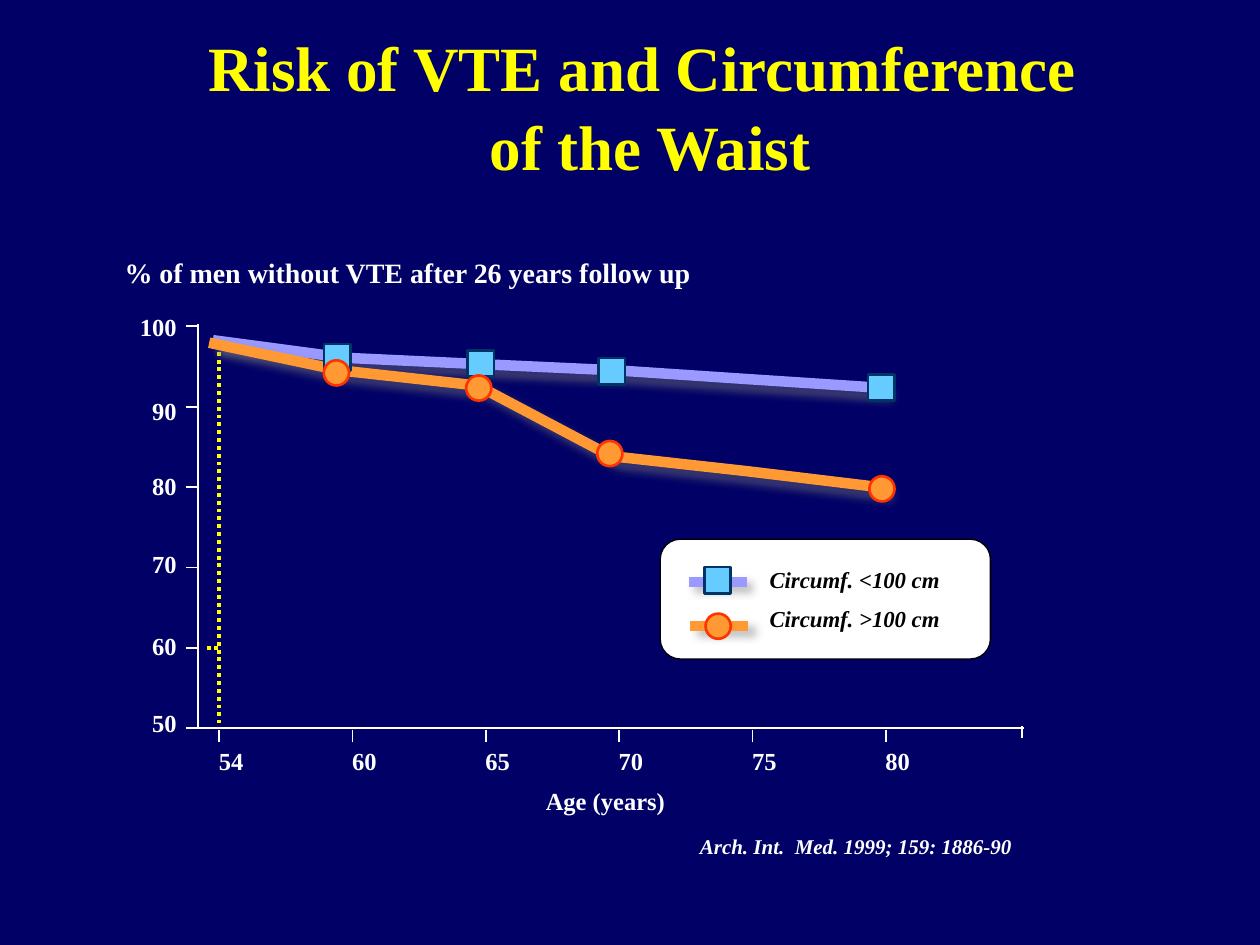
from lxml.etree import SubElement as Sub
from pptx import Presentation
from pptx.dml.color import RGBColor
from pptx.enum.dml import MSO_LINE_DASH_STYLE as Dash
from pptx.enum.shapes import MSO_CONNECTOR as Conn, MSO_SHAPE as Kind
from pptx.enum.text import MSO_ANCHOR as Anchor, PP_ALIGN as Align
from pptx.oxml.ns import qn
from pptx.util import Inches, Pt

FONT = "Times New Roman"
WHITE, YELLOW = "FFFFFF", "FFFF00"
SLIM, WIDE = "9999FF", "FF9933"
MARKS = {
    SLIM: (Kind.RECTANGLE, 0.21, "66CCFF", "003366"),
    WIDE: (Kind.OVAL, 0.2, "FF9933", "FF3300"),
}


def rgb(code):
    return RGBColor.from_string(code)


def text(slide, box, words, size, color=WHITE, align=Align.LEFT,
         italic=False, wrap=True):
    shape = slide.shapes.add_textbox(*map(Inches, box))
    frame = shape.text_frame
    frame.word_wrap = wrap
    para = frame.paragraphs[0]
    para.alignment = align
    for i, part in enumerate(words.split("\n")):
        if i:
            para.add_line_break()
        run = para.add_run()
        run.text = part
        font = run.font
        font.name, font.size, font.bold = FONT, Pt(size), True
        font.italic = italic
        font.color.rgb = rgb(color)
    return frame


def stroke(shape, color, width, dash=None):
    shape.line.color.rgb = rgb(color)
    shape.line.width = Pt(width)
    if dash:
        shape.line.dash_style = dash


def shade(shape, dist, angle):
    """Give the shape a soft grey shadow."""
    props = shape._element.spPr
    for old in props.findall(qn("a:effectLst")):
        props.remove(old)
    shadow = Sub(Sub(props, qn("a:effectLst")), qn("a:outerShdw"),
                 blurRad=str(Pt(5)), dist=str(Pt(dist)),
                 dir=str(angle * 60000), algn="ctr", rotWithShape="0")
    color = Sub(shadow, qn("a:srgbClr"), val="808080")
    Sub(color, qn("a:alpha"), val="50000")


def line(slide, x1, y1, x2, y2, color=WHITE, width=1, dash=None):
    shape = slide.shapes.add_connector(
        Conn.STRAIGHT, *map(Inches, (x1, y1, x2, y2)))
    stroke(shape, color, width, dash)
    Sub(shape._element.spPr, qn("a:effectLst"))
    return shape


def path(slide, points, color, width):
    spots = [(Inches(x), Inches(y)) for x, y in points]
    maker = slide.shapes.build_freeform(*spots[0])
    maker.add_line_segments(spots[1:], close=False)
    shape = maker.convert_to_shape()
    shape.fill.background()
    shape.shadow.inherit = False
    stroke(shape, color, width)
    return shape


def solid(slide, kind, box, fill, edge, width):
    shape = slide.shapes.add_shape(kind, *map(Inches, box))
    shape.shadow.inherit = False
    shape.fill.solid()
    shape.fill.fore_color.rgb = rgb(fill)
    stroke(shape, edge, width)
    return shape


def mark(slide, x, y, name):
    """Draw the marker of a series with its corner at x, y."""
    kind, size, fill, edge = MARKS[name]
    solid(slide, kind, (x, y, size, size), fill, edge, 1.5)


def title(slide, box):
    frame = text(slide, box, "Risk of VTE and Circumference \nof the Waist",
                 36, YELLOW, Align.CENTER)
    frame.vertical_anchor = Anchor.MIDDLE
    frame.paragraphs[0].line_spacing = 1.05


def axes(slide, box):
    x, y, w, h = box
    base = y + h
    first, step = x + 0.17, 1.058
    line(slide, first, y + 0.16, first, base - 0.04, YELLOW, 2.25,
         Dash.ROUND_DOT)
    line(slide, x + 0.07, base - 0.64, first, base - 0.64, YELLOW, 2.25,
         Dash.ROUND_DOT)
    for i, age in enumerate((54, 60, 65, 70, 75, 80)):
        at = first + i * step
        line(slide, at, base + 0.11, at, base + 0.01)
        text(slide, (at - 0.41, base + 0.09, 0.7, 0.39), str(age), 14,
             align=Align.RIGHT)
    line(slide, x + 6.54, base + 0.08, x + 6.54, base - 0.02)

    tops = (-0.14, 0.52, 1.12, 1.74, 2.39, 3)
    for i, top in enumerate(tops):
        at = y + 0.02 + i * 0.638
        line(slide, x + 0.01, at, x - 0.09, at)
        text(slide, (x - 0.78, y + top, 0.71, 0.35), str(100 - 10 * i), 14,
             align=Align.RIGHT)
    path(slide, [(x, y), (x, base), (x + w, base)], WHITE, 1)
    text(slide, (x - 0.06, base + 0.41, 6.64, 0.33), "Age (years) ", 14,
         align=Align.CENTER)
    text(slide, (x - 0.68, y - 0.59, 4.77, 0.37),
         "% of men without VTE after 26 years follow up", 16, wrap=False)


def curves(slide, box):
    x, y = box[:2]
    rows = (
        (SLIM, 5.7, 45,
         ((0.12, 0.13), (1.17, 0.27), (2.24, 0.32), (3.33, 0.37),
          (4.38, 0.44), (5.45, 0.51)),
         ((1, 0.16), (2.14, 0.21), (3.18, 0.27), (5.32, 0.4))),
        (WIDE, 6.4, 39,
         ((0.09, 0.15), (1.13, 0.37), (2.22, 0.49), (3.28, 1.05),
          (4.36, 1.17), (5.44, 1.3)),
         ((1, 0.29), (2.13, 0.41), (3.17, 0.93), (5.33, 1.21))),
    )
    for name, dist, angle, points, _ in rows:
        shape = path(slide, [(x + a, y + b) for a, b in points], name, 6)
        shade(shape, dist, angle)
    for name, *_, spots in rows:
        for a, b in spots:
            mark(slide, x + a, y + b, name)


def legend(slide, box):
    x, y = box[:2]
    panel = solid(slide, Kind.ROUNDED_RECTANGLE, box, WHITE, "000000", 0.75)
    panel.adjustments[0] = 0.167
    rows = (
        ("Circumf. <100 cm", SLIM, 0.16, 0.23, 0.34, 0.35, 0.22, 4.2, 45),
        ("Circumf. >100 cm", WIDE, 0.47, 0.24, 0.69, 0.36, 0.59, 5, 37),
    )
    for words, name, top, left, mid, mx, my, dist, angle in rows:
        text(slide, (x + 0.77, y + top, 2.63, 0.33), words, 13, "000000",
             italic=True)
        bar = line(slide, x + left, y + mid, x + left + 0.46, y + mid,
                   name, 6)
        shade(bar, dist, angle)
        mark(slide, x + mx, y + my, name)


def main():
    deck = Presentation()
    deck.slide_width, deck.slide_height = Inches(10), Inches(7.5)
    slide = deck.slides.add_slide(deck.slide_layouts[6])
    back = slide.background.fill
    back.solid()
    back.fore_color.rgb = rgb("000066")
    plot = (1.57, 2.57, 6.56, 3.21)
    title(slide, (0.58, 0, 9.16, 1.65))
    axes(slide, plot)
    curves(slide, plot)
    legend(slide, (5.24, 4.28, 2.62, 0.95))
    text(slide, (5.45, 6.57, 2.68, 0.3), "Arch. Int.  Med. 1999; 159: 1886-90",
         12, align=Align.RIGHT, italic=True, wrap=False)
    deck.save("out.pptx")


if __name__ == "__main__":
    main()
